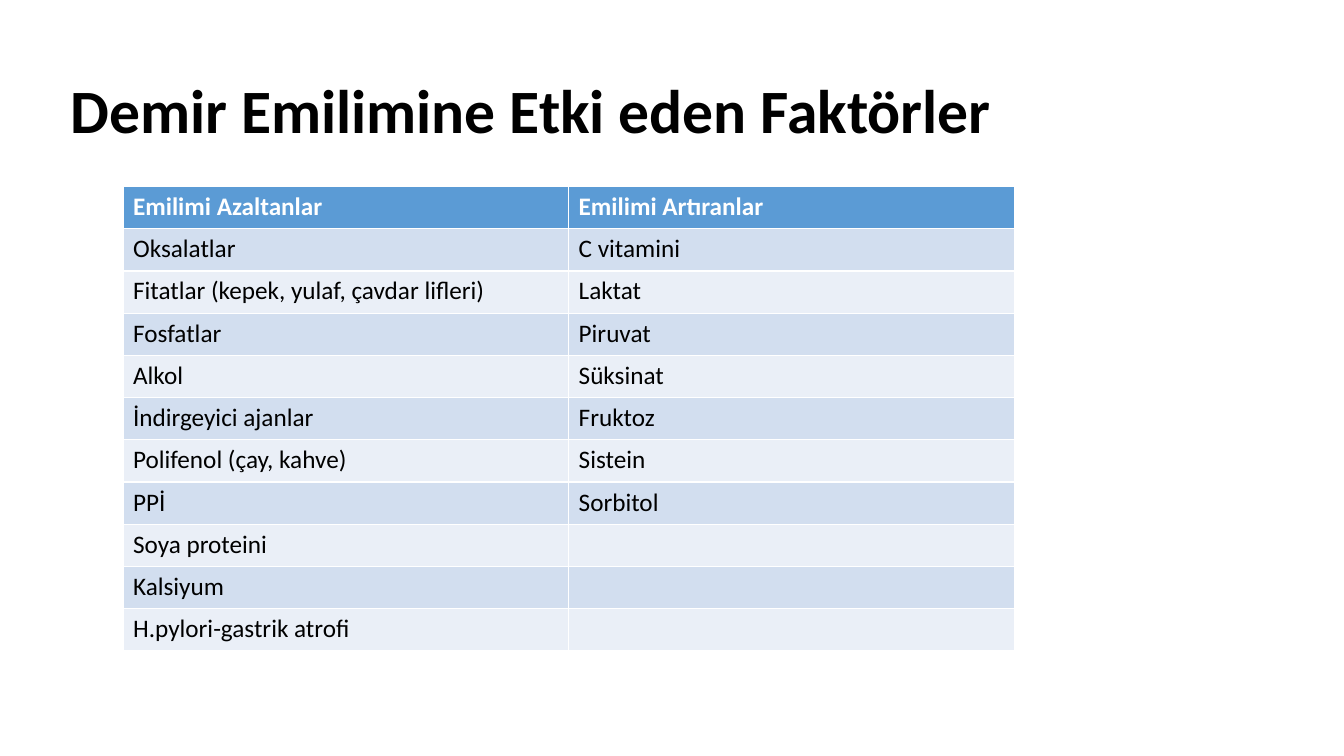
"""Build a slide with a table of the factors that affect iron absorption."""
from itertools import zip_longest

from pptx import Presentation
from pptx.dml.color import RGBColor
from pptx.enum.text import MSO_ANCHOR, PP_ALIGN
from pptx.util import Inches, Pt

LEFT = PP_ALIGN.LEFT
MIDDLE = MSO_ANCHOR.MIDDLE
BLACK = RGBColor(0x00, 0x00, 0x00)
WHITE = RGBColor(0xFF, 0xFF, 0xFF)
HEADER_BLUE = RGBColor(0x5B, 0x9B, 0xD5)
BAND_DARK = RGBColor(0xD2, 0xDE, 0xEF)
BAND_LIGHT = RGBColor(0xEA, 0xEF, 0xF7)

REDUCERS = [
    "Emilimi Azaltanlar",
    "Oksalatlar",
    "Fitatlar (kepek, yulaf, çavdar lifleri)",
    "Fosfatlar",
    "Alkol",
    "İndirgeyici ajanlar",
    "Polifenol (çay, kahve)",
    "PPİ",
    "Soya proteini",
    "Kalsiyum",
    "H.pylori-gastrik atrofi",
]
ENHANCERS = [
    "Emilimi Artıranlar",
    "C vitamini",
    "Laktat",
    "Piruvat",
    "Süksinat",
    "Fruktoz",
    "Sistein",
    "Sorbitol",
]


def format_paragraph(paragraph, size, color, bold):
    paragraph.alignment = LEFT
    paragraph.font.name = "Calibri"
    paragraph.font.size = Pt(size)
    paragraph.font.bold = bold
    paragraph.font.color.rgb = color


presentation = Presentation()
presentation.slide_width = Inches(13.33)
presentation.slide_height = Inches(7.5)
slide = presentation.slides.add_slide(presentation.slide_layouts[5])

title = slide.shapes.title
title.left, title.top = Inches(0.6), Inches(0.4)
title.width, title.height = Inches(9.46), Inches(1.45)
title.text_frame.text = "Demir Emilimine Etki eden Faktörler"
title.text_frame.vertical_anchor = MIDDLE
title_paragraph = title.text_frame.paragraphs[0]
title_paragraph.line_spacing = 0.9
format_paragraph(title_paragraph, 44, BLACK, True)

rows = list(zip_longest(REDUCERS, ENHANCERS, fillvalue=""))
table = slide.shapes.add_table(
    len(rows), 2, Inches(1.22), Inches(1.85), Inches(8.84), Inches(4.61)
).table

for row_index, row in enumerate(rows):
    is_header = row_index == 0
    band = BAND_DARK if row_index % 2 else BAND_LIGHT
    for column_index, text in enumerate(row):
        cell = table.cell(row_index, column_index)
        cell.text = text
        cell.fill.solid()
        cell.fill.fore_color.rgb = HEADER_BLUE if is_header else band
        format_paragraph(
            cell.text_frame.paragraphs[0], 18, WHITE if is_header else BLACK, is_header
        )

presentation.save("out.pptx")
